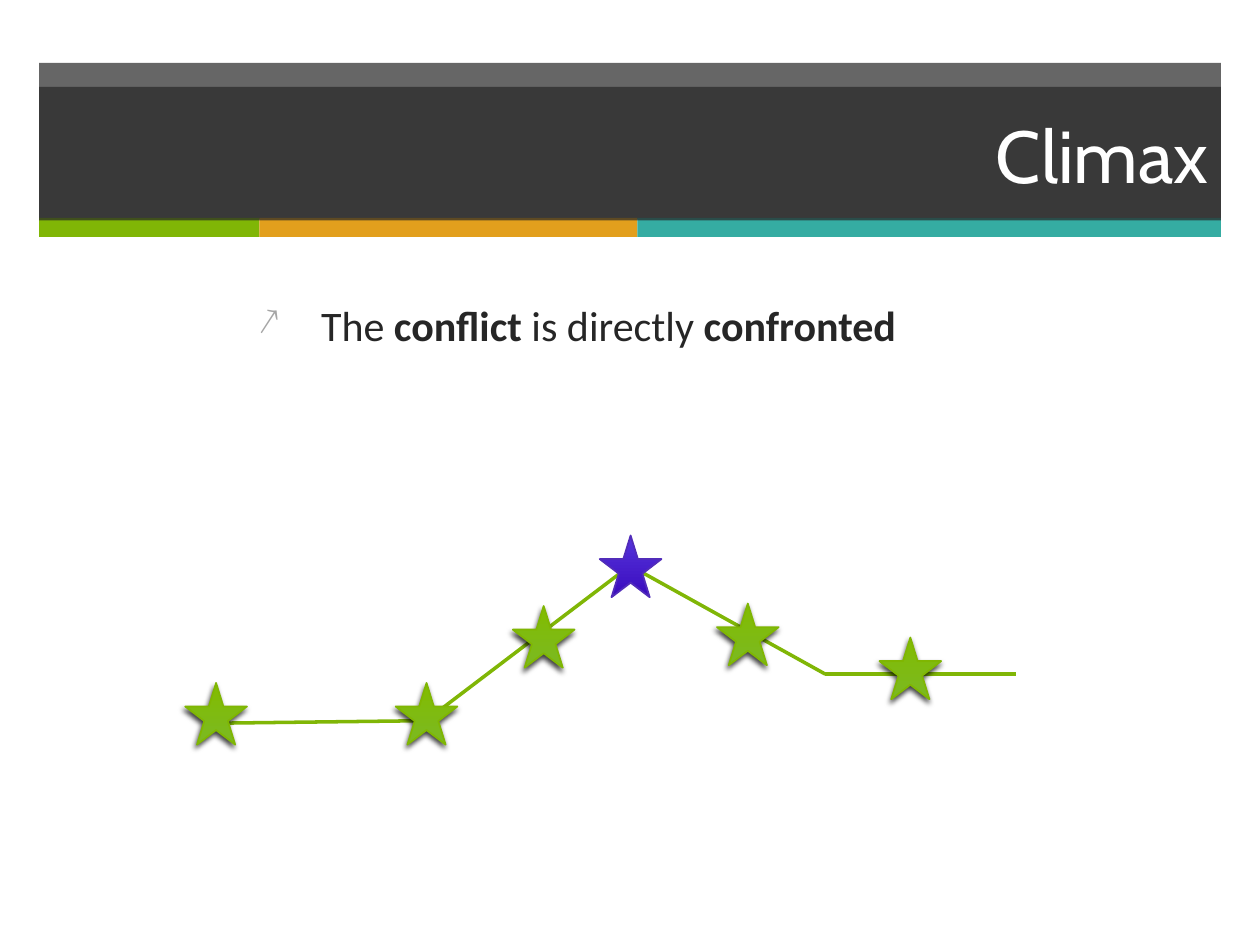
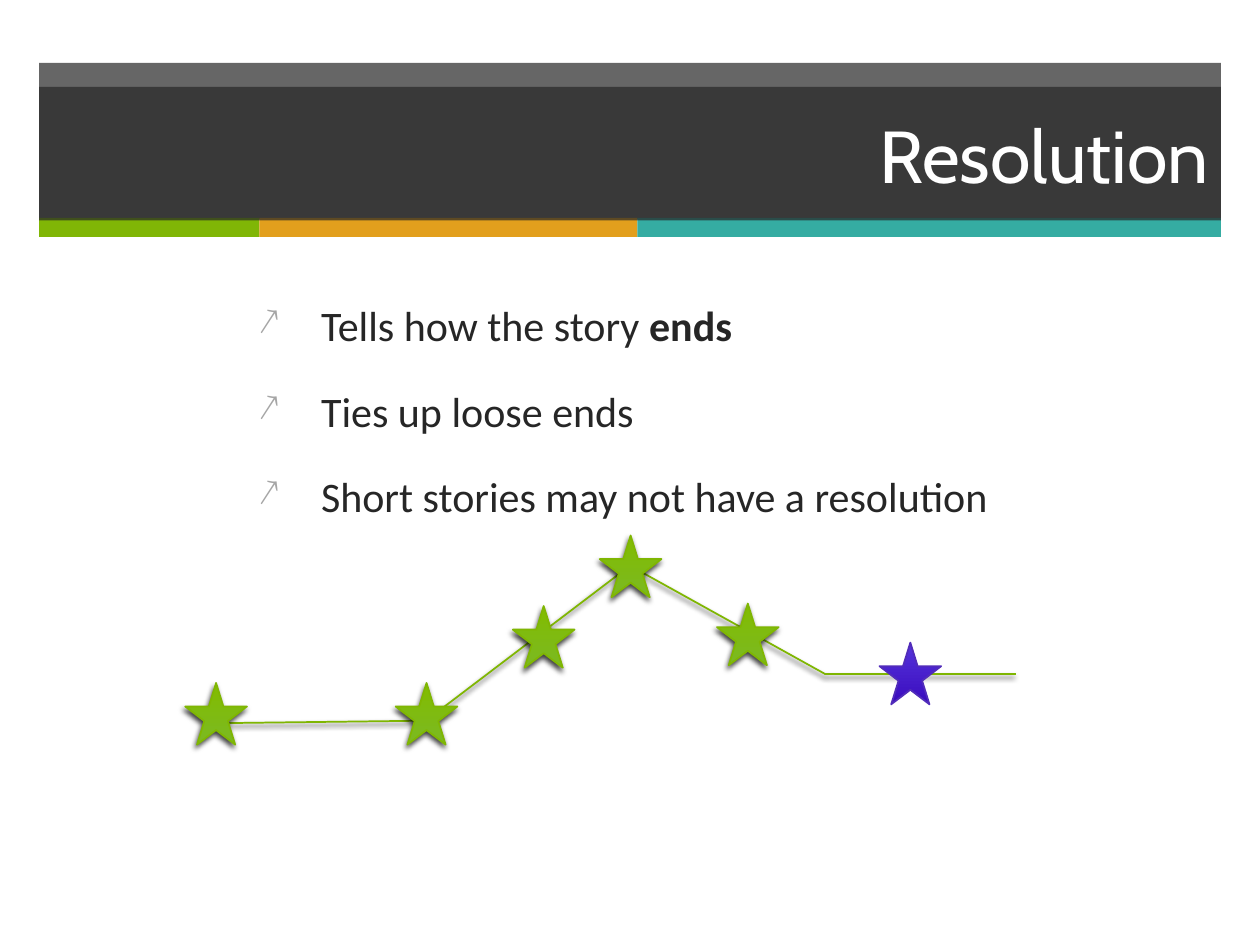
from dataclasses import dataclass
from itertools import accumulate, pairwise

from lxml.etree import SubElement
from pptx import Presentation
from pptx.dml.color import RGBColor as Color
from pptx.enum.shapes import MSO_CONNECTOR as Connector, MSO_SHAPE as Shape
from pptx.enum.text import MSO_ANCHOR as Anchor, PP_ALIGN as Align
from pptx.oxml.ns import qn
from pptx.util import Emu, Inches, Pt

SLIDES = [
    {
        "title": "Climax",
        "bullets": [[("The ", False), ("conflict", True), (" is directly ", False), ("confronted", True)]],
        "current_stage": "climax",
        "star_tops": {},
        "plot_line": ("80B606", 2, False),
    },
    {
        "title": "Resolution",
        "bullets": [
            [("Tells how the story ", False), ("ends", True)],
            [("Ties up loose ends", False)],
            [("Short stories may not have a resolution", False)],
        ],
        "current_stage": "resolution",
        "star_tops": {"resolution": 51},
        "plot_line": ("7FB602", 1, True),
    },
]

COLUMNS, ROWS = 100, 75
BAND_LEFT, BAND_WIDTH = 3.1, 93.8
TOP_BAND = (BAND_LEFT, 5, BAND_WIDTH, 12.4)
TITLE_BAND = (BAND_LEFT, 6.9, BAND_WIDTH, 10.6)
STRIPE_TOP, STRIPE_HEIGHT = 17.3, 1.5
STRIPES = [(17.5, "80B606"), (30, "E29F1D"), (46.3, "35ACA2")]
BODY = (19.5, 23.3, 77.4, 43.7)
PLOT_POINTS = [(17.1, 57.4), (33.8, 57.2), (50, 44.9), (65.5, 53.5), (80.6, 53.5)]
STAR_SIZE = 4.9
STARS = {
    "exposition": (14.7, 54.2),
    "inciting incident": (31.4, 54.2),
    "rising action": (40.7, 48.1),
    "falling action": (56.9, 47.9),
    "resolution": (69.8, 50.6),
    "climax": (47.6, 42.5),
}


@dataclass(frozen=True)
class Theme:
    dark: str = "262626"
    white: str = "FFFFFF"
    bullet: str = "A6A6A6"
    shadow: str = "000000"
    star: tuple = ("7BB922", "82BC00", "7FB602")
    current_star: tuple = ("3A0BBE", "5635DB", "512CBA")
    title_font: str = "Cabin"
    body_font: str = "Calibri"
    title_size: int = 42
    body_size: int = 24
    space_before: int = 20
    band_opacity: int = 70


THEME = Theme()
presentation = Presentation()
presentation.slide_width, presentation.slide_height = Inches(10), Inches(7.5)


def column(count):
    return Emu(round(presentation.slide_width * count / COLUMNS))


def row(count):
    return Emu(round(presentation.slide_height * count / ROWS))


def place(box):
    left, top, width, height = box
    return column(left), row(top), column(width), row(height)


def set_effects(shape, shadowed=False):
    effects = SubElement(shape._element.spPr, qn("a:effectLst"))
    if shadowed:
        shadow = SubElement(effects, qn("a:outerShdw"), blurRad=str(Pt(3)), dist=str(Pt(2)),
                            dir=str(110 * 60000), rotWithShape="0")
        color = SubElement(shadow, qn("a:srgbClr"), val=THEME.shadow)
        SubElement(color, qn("a:alpha"), val="75000")


def add_band(slide, box, color, opacity=100):
    band = slide.shapes.add_shape(Shape.RECTANGLE, *place(box))
    band.fill.solid()
    band.fill.fore_color.rgb = Color.from_string(color)
    band.line.fill.background()
    set_effects(band)
    if opacity < 100:
        fill_color = band._element.spPr.find(f"{qn('a:solidFill')}/{qn('a:srgbClr')}")
        SubElement(fill_color, qn("a:alpha"), val=str(opacity * 1000))
    return band


def add_run(paragraph, text, font, size, color, bold=False):
    run = paragraph.add_run()
    run.text = text
    run.font.name, run.font.size, run.font.bold = font, Pt(size), bold
    run.font.color.rgb = Color.from_string(color)


def add_header(slide, title):
    add_band(slide, TOP_BAND, THEME.dark, THEME.band_opacity)
    lefts = accumulate((width for width, _ in STRIPES), initial=BAND_LEFT)
    for left, (width, color) in zip(lefts, STRIPES):
        add_band(slide, (left, STRIPE_TOP, width, STRIPE_HEIGHT), color)
    frame = add_band(slide, TITLE_BAND, THEME.dark, THEME.band_opacity).text_frame
    frame.vertical_anchor = Anchor.MIDDLE
    paragraph = frame.paragraphs[0]
    paragraph.alignment = Align.RIGHT
    add_run(paragraph, title, THEME.title_font, THEME.title_size, THEME.white)


def add_bullet_mark(paragraph):
    properties = paragraph._p.get_or_add_pPr()
    properties.set("marL", str(Inches(0.5)))
    properties.set("indent", str(Inches(-0.5)))
    bullet_color = SubElement(properties, qn("a:buClr"))
    SubElement(bullet_color, qn("a:srgbClr"), val=THEME.bullet)
    SubElement(properties, qn("a:buSzPct"), val="90000")
    SubElement(properties, qn("a:buChar"), char="↗")


def add_bullets(slide, bullets):
    frame = slide.shapes.add_textbox(*place(BODY)).text_frame
    frame.word_wrap = True
    for index, runs in enumerate(bullets):
        paragraph = frame.add_paragraph() if index else frame.paragraphs[0]
        paragraph.space_before = Pt(THEME.space_before)
        add_bullet_mark(paragraph)
        for text, bold in runs:
            add_run(paragraph, text, THEME.body_font, THEME.body_size, THEME.dark, bold)


def add_plot_line(slide, color, width, shadowed):
    for (x1, y1), (x2, y2) in pairwise(PLOT_POINTS):
        segment = slide.shapes.add_connector(Connector.STRAIGHT, column(x1), row(y1), column(x2), row(y2))
        segment.line.color.rgb = Color.from_string(color)
        segment.line.width = Pt(width)
        set_effects(segment, shadowed)


def add_star(slide, left, top, is_current):
    star = slide.shapes.add_shape(Shape.STAR_5_POINT, *place((left, top, STAR_SIZE, STAR_SIZE)))
    *gradient, outline = THEME.current_star if is_current else THEME.star
    star.fill.gradient()
    star.fill.gradient_angle = 90
    for stop, color in zip(star.fill.gradient_stops, gradient):
        stop.color.rgb = Color.from_string(color)
    star.line.color.rgb = Color.from_string(outline)
    star.line.width = Pt(1)
    set_effects(star, not is_current)


def main():
    for content in SLIDES:
        slide = presentation.slides.add_slide(presentation.slide_layouts[6])
        add_header(slide, content["title"])
        add_bullets(slide, content["bullets"])
        add_plot_line(slide, *content["plot_line"])
        for stage, (left, top) in STARS.items():
            star_top = content["star_tops"].get(stage, top)
            add_star(slide, left, star_top, stage == content["current_stage"])
    presentation.save("out.pptx")


if __name__ == "__main__":
    main()
